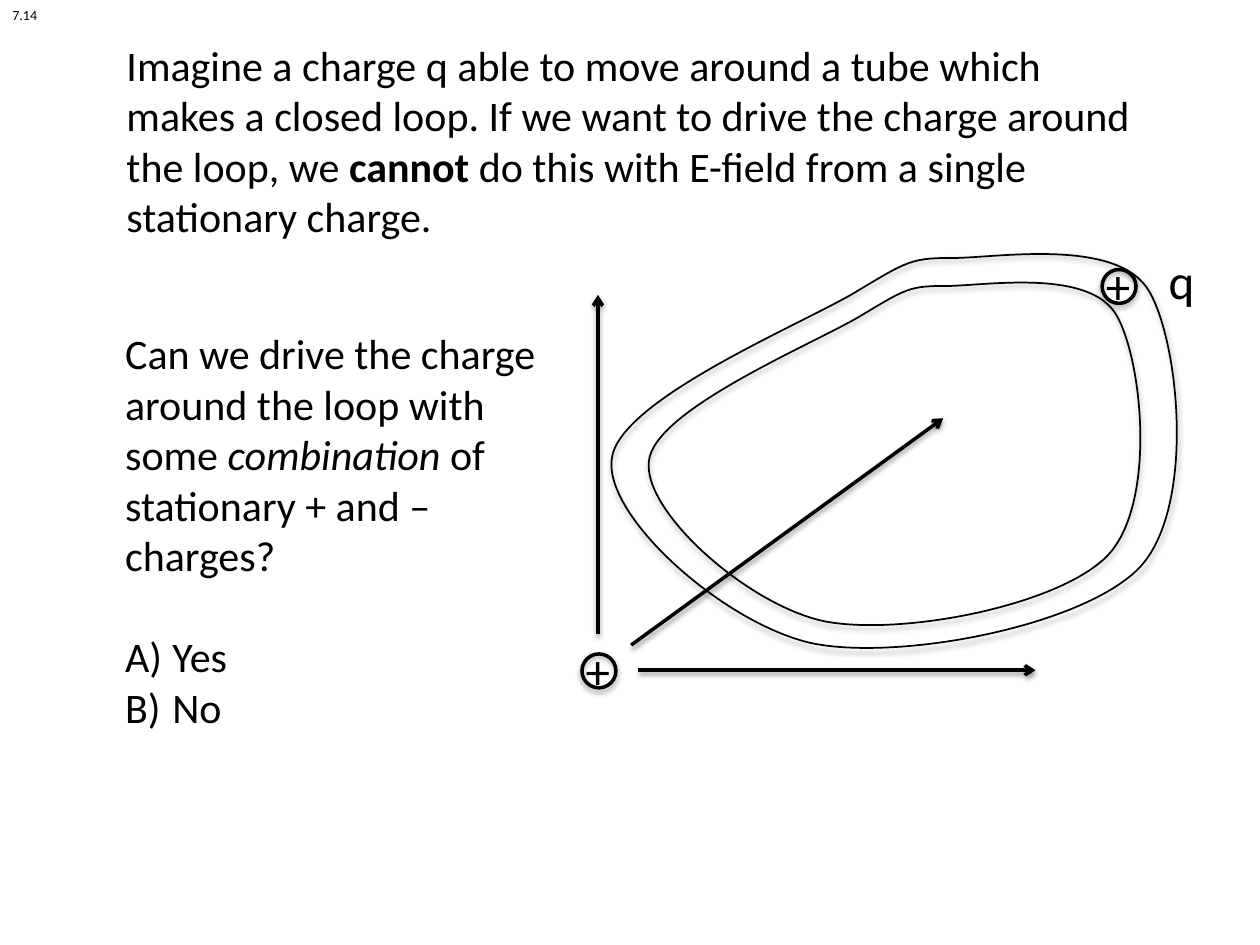
from dataclasses import dataclass

from lxml import etree
from pptx import Presentation
from pptx.dml.color import RGBColor
from pptx.enum import shapes, text
from pptx.oxml import ns
from pptx.util import Pt


@dataclass(frozen=True)
class Theme:
    ink: RGBColor = RGBColor(0, 0, 0)
    font: str = "Calibri"
    body: float = 24
    sign: float = 28
    note: float = 8
    thin: float = 1
    bold: float = 2


# Tube outline: a start point, then cubic curves (two handles and an end).
START = (123.1, 27.3)
CURVES = [
    (94.3, 43.9), (6.5, 80.6), (3.6, 109.4),
    (0, 138.2), (59.8, 191.5), (103.7, 200.9),
    (147.6, 209.5), (237.6, 192.2), (265.7, 163.4),
    (293.8, 133.9), (285.8, 51.8), (270.7, 25.9),
    (255.6, 0), (199.4, 8.6), (175.7, 9.3),
    (151.9, 9.3), (151.9, 10.1), START,
]


def add(node, tag, **attrs):
    return etree.SubElement(node, ns.qn(tag), attrs)


def bend(shape):
    """Turn each three straight segments into one cubic curve."""
    legs = list(shape.element.iter(ns.qn("a:lnTo")))
    for i in range(0, len(legs), 3):
        curve = etree.Element(ns.qn("a:cubicBezTo"))
        legs[i].addprevious(curve)
        for leg in legs[i:i + 3]:
            curve.append(leg[0])
            leg.getparent().remove(leg)


class Sheet:
    def __init__(self, slide, theme):
        self.items, self.theme = slide.shapes, theme

    def ink(self, item, width, alpha=35):
        """Set the black line and the soft shadow below it."""
        item.line.color.rgb = self.theme.ink
        item.line.width = Pt(width)
        glow = add(add(item.element.spPr, "a:effectLst"), "a:outerShdw",
                   blurRad=str(Pt(3.1)), dist=str(Pt(1.8)),
                   dir="5400000", rotWithShape="0")
        tint = add(glow, "a:srgbClr", val=str(self.theme.ink))
        add(tint, "a:alpha", val=str(alpha * 1000))

    def tube(self, *walls):
        """Group the walls, each given as left, top and scale."""
        group = self.items.add_group_shape()
        for x, y, scale in walls:
            dots = [(Pt(x + scale * a), Pt(y + scale * b))
                    for a, b in [START] + CURVES]
            pen = group.shapes.build_freeform(*dots[0])
            pen.add_line_segments(dots[1:], close=True)
            wall = pen.convert_to_shape()
            bend(wall)
            wall.fill.background()
            self.ink(wall, self.theme.thin)

    def ring(self, x, y, size):
        ring = self.items.add_shape(
            shapes.MSO_SHAPE.OVAL, Pt(x), Pt(y), Pt(size), Pt(size))
        ring.fill.background()
        self.ink(ring, self.theme.bold)

    def arrow(self, *ends):
        line = self.items.add_connector(
            shapes.MSO_CONNECTOR.STRAIGHT, *map(Pt, ends))
        self.ink(line, self.theme.bold, 38)
        add(line.element.spPr.find(ns.qn("a:ln")), "a:tailEnd", type="arrow")

    def text(self, x, y, w, h, size, *paras, wrap=False):
        """Add paragraphs, each a list of (words, style) runs."""
        box = self.items.add_textbox(Pt(x), Pt(y), Pt(w), Pt(h))
        frame = box.text_frame
        frame.word_wrap = wrap
        frame.auto_size = text.MSO_AUTO_SIZE.SHAPE_TO_FIT_TEXT
        for i, runs in enumerate(paras):
            para = frame.add_paragraph() if i else frame.paragraphs[0]
            for words, style in runs:
                run = para.add_run()
                run.text = words
                font = run.font
                font.name, font.size = self.theme.font, Pt(size)
                font.color.rgb = self.theme.ink
                font.bold, font.italic = style == "b", style == "i"
        return frame

    def choices(self, paras, gap):
        """Letter the paragraphs A), B) and set a gap above the first."""
        paras[0].space_before = Pt(gap)
        for para in paras:
            props = para._p.get_or_add_pPr()
            props.set("marL", str(Pt(27)))
            props.set("indent", str(Pt(-27)))
            add(props, "a:buFont", typeface="+mj-lt")
            add(props, "a:buAutoNum", type="alphaUcParenR")


def main():
    deck = Presentation()
    deck.slide_width, deck.slide_height = Pt(720), Pt(540)
    look = Theme()
    page = Sheet(deck.slides.add_slide(deck.slide_layouts[6]), look)

    page.text(65.2, 19, 591, 124, look.body, [
        ("Imagine a charge q able to move around a tube which makes a closed "
         "loop. If we want to drive the charge around the loop, we ", ""),
        ("cannot ", "b"),
        ("do this with E-field from a single stationary charge.", ""),
    ], wrap=True)

    page.tube((367.2, 154.1, 1), (345.4, 136.7, 1.15))

    page.text(660.7, 139.7, 29.5, 41, look.sign, [("q", "")])
    for x, y in [(629.8, 154), (332.6, 373.7)]:
        page.ring(x, y, 19.4)
        page.text(x - 5, y - 11.5, 29.5, 41, look.sign, [("+", "")])

    for ends in [(364.7, 383, 591.8, 383), (360.7, 368.6, 539, 239),
                 (341.7, 362.2, 341.7, 168.5)]:
        page.arrow(*ends)

    frame = page.text(64.4, 183.8, 267.1, 262, look.body, [
        ("Can we drive the charge around the loop with some ", ""),
        ("combination", "i"),
        (" of stationary + and – charges?", ""),
    ], [("Yes", "")], [("No", "")], wrap=True)
    page.choices(frame.paragraphs[1:], 29)

    page.text(0, 0, 28.8, 17, look.note, [("7.14", "")])
    deck.save("out.pptx")


if __name__ == "__main__":
    main()
